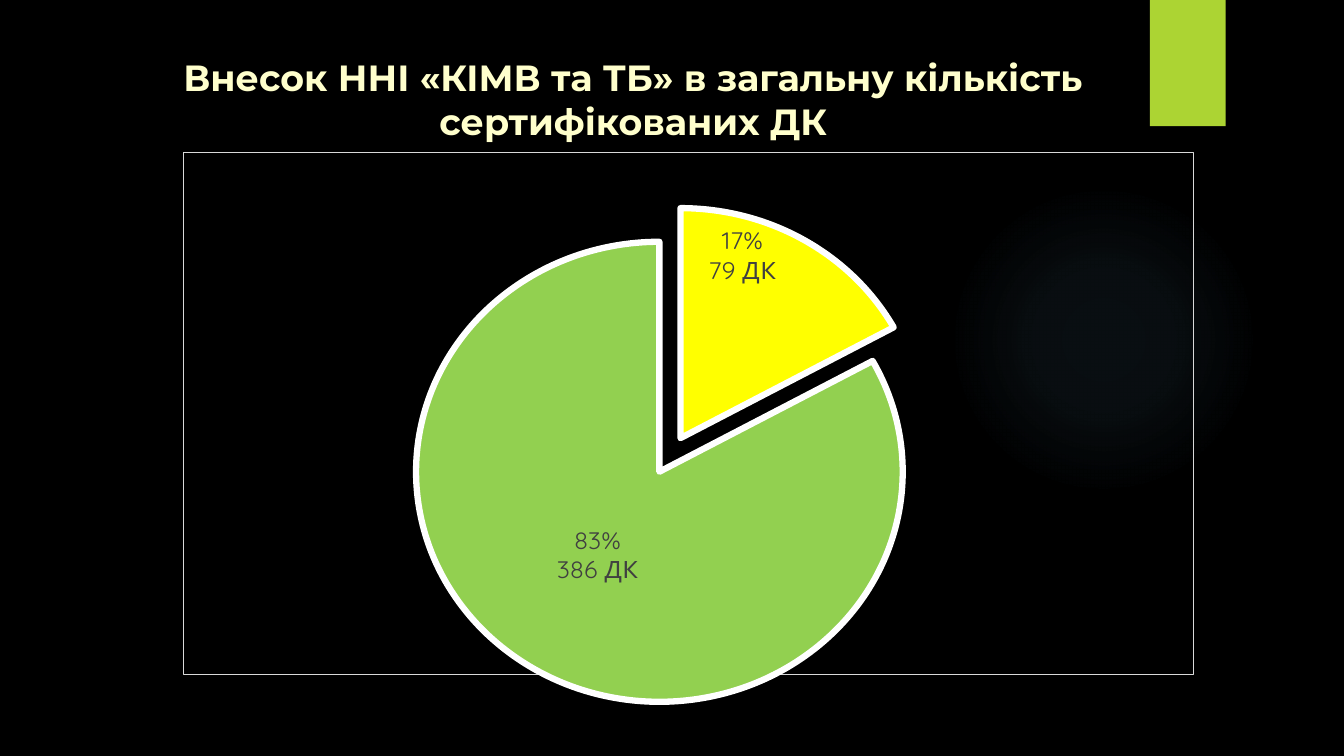
"""Build a slide with a pie chart of certified courses."""
from lxml import etree
from pptx import Presentation
from pptx.chart.data import CategoryChartData
from pptx.dml.color import RGBColor
from pptx.enum.chart import XL_CHART_TYPE, XL_LABEL_POSITION
from pptx.enum.shapes import MSO_SHAPE
from pptx.enum.text import MSO_ANCHOR, PP_ALIGN
from pptx.oxml import parse_xml
from pptx.oxml.ns import nsdecls, qn
from pptx.util import Cm, Pt

PIE = XL_CHART_TYPE.PIE
MIDDLE = XL_LABEL_POSITION.CENTER
OVAL, RECT = MSO_SHAPE.OVAL, MSO_SHAPE.RECTANGLE
TOP, CENTER = MSO_ANCHOR.TOP, PP_ALIGN.CENTER

BLACK = RGBColor(0x00, 0x00, 0x00)
WHITE = RGBColor(0xFF, 0xFF, 0xFF)
CREAM = RGBColor(0xFF, 0xFF, 0xCC)
LIME = RGBColor(0xAC, 0xD4, 0x33)
YELLOW = RGBColor(0xFF, 0xFF, 0x00)
GREEN = RGBColor(0x92, 0xD0, 0x50)
GRAY = RGBColor(0x40, 0x40, 0x40)
SILVER = RGBColor(0xD9, 0xD9, 0xD9)
BLUE = RGBColor(0x7A, 0xC4, 0xF0)

HEAD_FONT, BODY_FONT = "Montserrat", "Quicksand"
HEAD = "Внесок ННІ «КІМВ та ТБ» в загальну кількість сертифікованих ДК"
GLOW = [(0, 7), (36, 6), (69, 0)]
PLOT = {"x": 0.139, "y": 0.106, "w": 0.707, "h": 0.882}
SLICES = [
    (17, YELLOW, ("17%", "79 ДК"), {"x": 0, "y": -0.16}, 0),
    (83, GREEN, ("83%", "386 ДК"), {"x": 0, "y": -0.03}, 17),
]


def add_form(slide, kind, left, top, width, height):
    """Add a preset shape without line or shadow."""
    form = slide.shapes.add_shape(kind, Cm(left), Cm(top), Cm(width), Cm(height))
    form.shadow.inherit = False
    form.line.fill.background()
    return form


def add_glow(slide):
    """Add the faint round light on the right."""
    glow = add_form(slide, OVAL, 23.9, 4.65, 7.82, 7.82)
    stops = "".join(
        f'<a:gs pos="{pos * 1000}"><a:srgbClr val="{BLUE}">'
        f'<a:alpha val="{alpha * 1000}"/></a:srgbClr></a:gs>'
        for pos, alpha in GLOW
    )
    glow.fill.gradient()
    old = glow.element.spPr.find(qn("a:gradFill"))
    old.getparent().replace(old, parse_xml(
        f'<a:gradFill {nsdecls("a")}><a:gsLst>{stops}</a:gsLst>'
        '<a:path path="circle"><a:fillToRect l="50000" t="50000" '
        'r="50000" b="50000"/></a:path></a:gradFill>'
    ))


def add_tab(slide):
    """Add the lime tab at the top edge."""
    tab = add_form(slide, RECT, 28.98, 0, 1.91, 3.18)
    tab.fill.solid()
    tab.fill.fore_color.rgb = LIME


def add_run(para, text, font, size, color, bold):
    """Add one styled run to a paragraph."""
    run = para.add_run()
    run.text = text
    run.font.name = font
    run.font.size = Pt(size)
    run.font.bold = bold
    run.font.color.rgb = color


def add_head(slide):
    """Add the centred heading."""
    box = slide.shapes.add_textbox(Cm(2.44), Cm(1.27), Cm(27.05), Cm(4.34))
    frame = box.text_frame
    frame.word_wrap = True
    frame.vertical_anchor = TOP
    para = frame.paragraphs[0]
    para.alignment = CENTER
    add_run(para, HEAD, HEAD_FONT, 26, CREAM, True)


def make_layout(spots, inner=False):
    """Return a manual layout element for a chart part."""
    layout = parse_xml(f'<c:layout {nsdecls("c")}><c:manualLayout/></c:layout>')
    pairs = [(name, spot) for name, spot in spots.items()]
    if inner:
        pairs = [("layoutTarget", "inner"), ("xMode", "edge"), ("yMode", "edge")] + pairs
    for name, value in pairs:
        etree.SubElement(layout[0], qn(f"c:{name}")).set("val", str(value))
    return layout


def style_slice(point, color, lines, shift):
    """Colour a slice and write its label."""
    point.format.fill.solid()
    point.format.fill.fore_color.rgb = color
    point.format.line.color.rgb = WHITE
    point.format.line.width = Pt(4.5)
    label = point.data_label
    frame = label.text_frame
    for index, line in enumerate(lines):
        para = frame.add_paragraph() if index else frame.paragraphs[0]
        add_run(para, line, BODY_FONT, 18, GRAY, False)
    label.position = MIDDLE


def add_frame(chart):
    """Draw the thin border round the chart."""
    space = chart.element if hasattr(chart, "element") else chart._chartSpace
    border = parse_xml(
        f'<c:spPr {nsdecls("c", "a")}><a:noFill/><a:ln w="{Pt(0.75)}"><a:solidFill>'
        f'<a:srgbClr val="{SILVER}"/></a:solidFill></a:ln></c:spPr>'
    )
    space.find(qn("c:chart")).addnext(border)


def add_pie(slide):
    """Add the pie chart with its two slices."""
    data = CategoryChartData()
    data.categories = [str(index + 1) for index in range(len(SLICES))]
    data.add_series("Series 1", [part[0] for part in SLICES])
    chart = slide.shapes.add_chart(
        PIE, Cm(4.6), Cm(3.84), Cm(25.48), Cm(13.92), data
    ).chart
    chart.has_legend = False
    chart.has_title = False
    chart.font.name = BODY_FONT
    chart.font.size = Pt(10)
    chart.font.color.rgb = WHITE
    add_frame(chart)
    plot = chart.plots[0]
    plot.vary_by_categories = True
    series = plot.series[0]
    for index, (_, color, lines, shift, _) in enumerate(SLICES):
        style_slice(series.points[index], color, lines, shift)
    root = chart._chartSpace
    for part, dot, label in zip(SLICES, root.iter(qn("c:dPt")), root.iter(qn("c:dLbl"))):
        label.find(qn("c:idx")).addnext(make_layout(part[3]))
        burst = etree.Element(qn("c:explosion"), val=str(part[4]))
        dot.find(qn("c:spPr")).addprevious(burst)
    area = next(root.iter(qn("c:plotArea")))
    for old in area.findall(qn("c:layout")):
        area.remove(old)
    area.insert(0, make_layout(PLOT, True))


def main():
    """Build and save the slide."""
    deck = Presentation()
    deck.slide_width, deck.slide_height = Cm(33.87), Cm(19.05)
    slide = deck.slides.add_slide(deck.slide_layouts[6])
    slide.background.fill.solid()
    slide.background.fill.fore_color.rgb = BLACK
    add_glow(slide)
    add_tab(slide)
    add_head(slide)
    add_pie(slide)
    deck.save("out.pptx")


if __name__ == "__main__":
    main()
